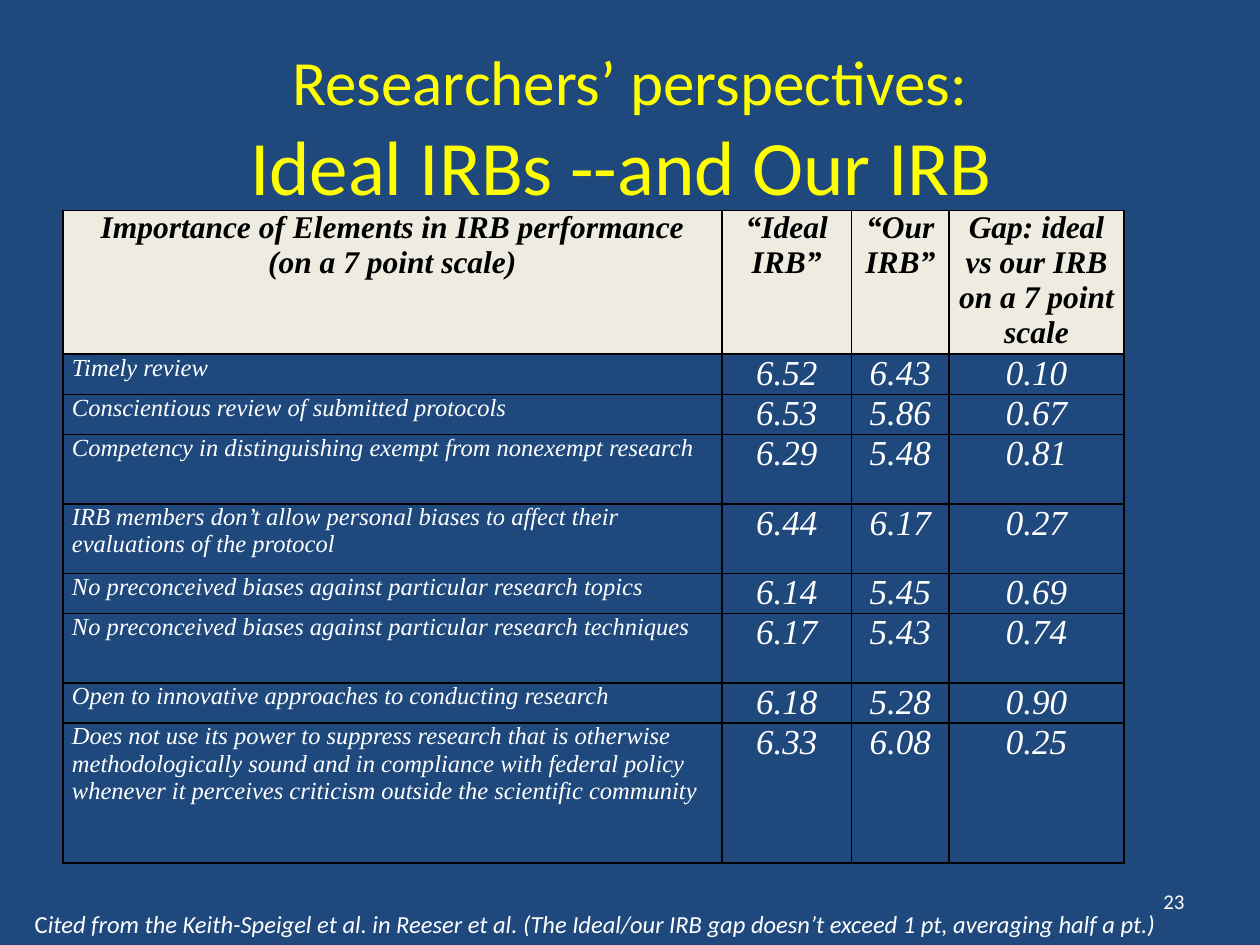
import pptx
import pptx.dml.color
import pptx.enum.text
import pptx.oxml
import pptx.oxml.ns
import pptx.util
from pptx.util import Cm

COLORS = {"background": "1F497D", "title": "FFFF00", "header": "EEECE1",
          "dark": "000000", "light": "FFFFFF"}
SANS, SERIF = "Calibri", "Times New Roman"
ALIGN = pptx.enum.text.PP_ALIGN
MIDDLE = pptx.enum.text.MSO_ANCHOR.MIDDLE

COLUMN_WIDTHS = [13.28, 2.62, 1.96, 3.53]
HEADER_HEIGHT, ONE_LINE, TWO_LINES, FOUR_LINES = 2.9, 0.81, 1.4, 2.82
HEADERS = [
    ["Importance of Elements in IRB performance", "(on a 7 point scale)"],
    ["“Ideal IRB”"],
    ["“Our IRB”"],
    ["Gap: ideal vs our IRB", "on a 7 point scale"],
]
RATINGS = [
    (ONE_LINE, "Timely review", "6.52", "6.43", "0.10"),
    (ONE_LINE, "Conscientious review of submitted protocols", "6.53", "5.86", "0.67"),
    (TWO_LINES, "Competency in distinguishing exempt from nonexempt research",
     "6.29", "5.48", "0.81"),
    (TWO_LINES, "IRB members don’t allow personal biases to affect their "
     "evaluations of the protocol", "6.44", "6.17", "0.27"),
    (ONE_LINE, "No preconceived biases against particular research topics",
     "6.14", "5.45", "0.69"),
    (TWO_LINES, "No preconceived biases against particular research techniques",
     "6.17", "5.43", "0.74"),
    (ONE_LINE, "Open to innovative approaches to conducting research",
     "6.18", "5.28", "0.90"),
    (FOUR_LINES, "Does not use its power to suppress research that is otherwise "
     "methodologically sound and in compliance with federal policy whenever it "
     "perceives criticism outside the scientific community",
     "6.33", "6.08", "0.25"),
]


def rgb(name):
    return pptx.dml.color.RGBColor.from_string(COLORS[name])


def add_run(p, text, size, color, font=SANS, bold=False, italic=False):
    r = p.add_run()
    r.text = text
    r.font.size = pptx.util.Pt(size)
    r.font.name = font
    r.font.bold = bold
    r.font.italic = italic
    r.font.color.rgb = rgb(color)


def place(sp, left, top, width, height):
    sp.left, sp.top, sp.width, sp.height = Cm(left), Cm(top), Cm(width), Cm(height)


def set_title(slide):
    sp = slide.shapes.title
    place(sp, 1.27, 0.43, 22.86, 4.24)
    tf = sp.text_frame
    tf.auto_size = pptx.enum.text.MSO_AUTO_SIZE.NONE
    tf.vertical_anchor = MIDDLE
    p = tf.paragraphs[0]
    p.alignment = ALIGN.CENTER
    add_run(p, "Researchers’ perspectives:", 36, "title")
    p.add_line_break()
    add_run(p, "Ideal IRBs --and Our IRB ", 44, "title")


def add_text(slide, box, runs, align=ALIGN.LEFT):
    """Add a wrapped text box; runs are (text, size, italic)."""
    sp = slide.shapes.add_textbox(*map(Cm, box))
    tf = sp.text_frame
    tf.word_wrap = True
    p = tf.paragraphs[0]
    p.alignment = align
    for text, size, italic in runs:
        add_run(p, text, size, "light", italic=italic)
    return tf


def set_borders(cell):
    tcPr = cell._tc.get_or_add_tcPr()
    for side in ("lnL", "lnR", "lnT", "lnB"):
        tcPr.append(pptx.oxml.parse_xml(
            f'<a:{side} {pptx.oxml.ns.nsdecls("a")} w="12700"><a:solidFill>'
            f'<a:srgbClr val="{COLORS["dark"]}"/></a:solidFill></a:{side}>'))


def fill_cell(cell, lines, size, color, align, bold=False, fill=None):
    set_borders(cell)
    if fill:
        cell.fill.solid()
        cell.fill.fore_color.rgb = rgb(fill)
    else:
        cell.fill.background()
    cell.margin_left = cell.margin_right = Cm(0.18)
    cell.margin_top = cell.margin_bottom = 0
    tf = cell.text_frame
    for i, line in enumerate(lines):
        p = tf.add_paragraph() if i else tf.paragraphs[0]
        p.alignment = align
        add_run(p, line, size, color, SERIF, bold, italic=True)


def add_ratings_table(slide):
    heights = [HEADER_HEIGHT] + [row[0] for row in RATINGS]
    table = slide.shapes.add_table(
        len(heights), len(COLUMN_WIDTHS), Cm(1.27), Cm(4.24),
        Cm(sum(COLUMN_WIDTHS)), Cm(sum(heights))).table
    table.first_row = table.horz_banding = False
    for column, width in zip(table.columns, COLUMN_WIDTHS):
        column.width = Cm(width)
    for row, height in zip(table.rows, heights):
        row.height = Cm(height)
    for c, lines in enumerate(HEADERS):
        fill_cell(table.cell(0, c), lines, 18, "dark", ALIGN.CENTER, True, "header")
    for r, (_, element, *scores) in enumerate(RATINGS, 1):
        fill_cell(table.cell(r, 0), [element], 14, "light", ALIGN.LEFT)
        for c, score in enumerate(scores, 1):
            fill_cell(table.cell(r, c), [score], 20, "light", ALIGN.CENTER)


def main():
    prs = pptx.Presentation()
    prs.slide_width, prs.slide_height = Cm(25.4), Cm(19.05)
    slide = prs.slides.add_slide(prs.slide_layouts[5])
    slide.background.fill.solid()
    slide.background.fill.fore_color.rgb = rgb("background")
    set_title(slide)
    add_ratings_table(slide)
    number = add_text(slide, (18.2, 17.66, 5.93, 1.01), [("23", 12, False)], ALIGN.RIGHT)
    number.vertical_anchor = MIDDLE
    citation = add_text(slide, (0, 18.2, 24.34, 0.86), [
        ("C", 14, False),
        ("ited from the Keith-Speigel et al. in Reeser et al. (The Ideal/our IRB "
         "gap doesn’t exceed 1 pt, averaging half a pt.)", 14, True)])
    citation.margin_left = Cm(0.7)
    prs.save("out.pptx")


if __name__ == "__main__":
    main()
